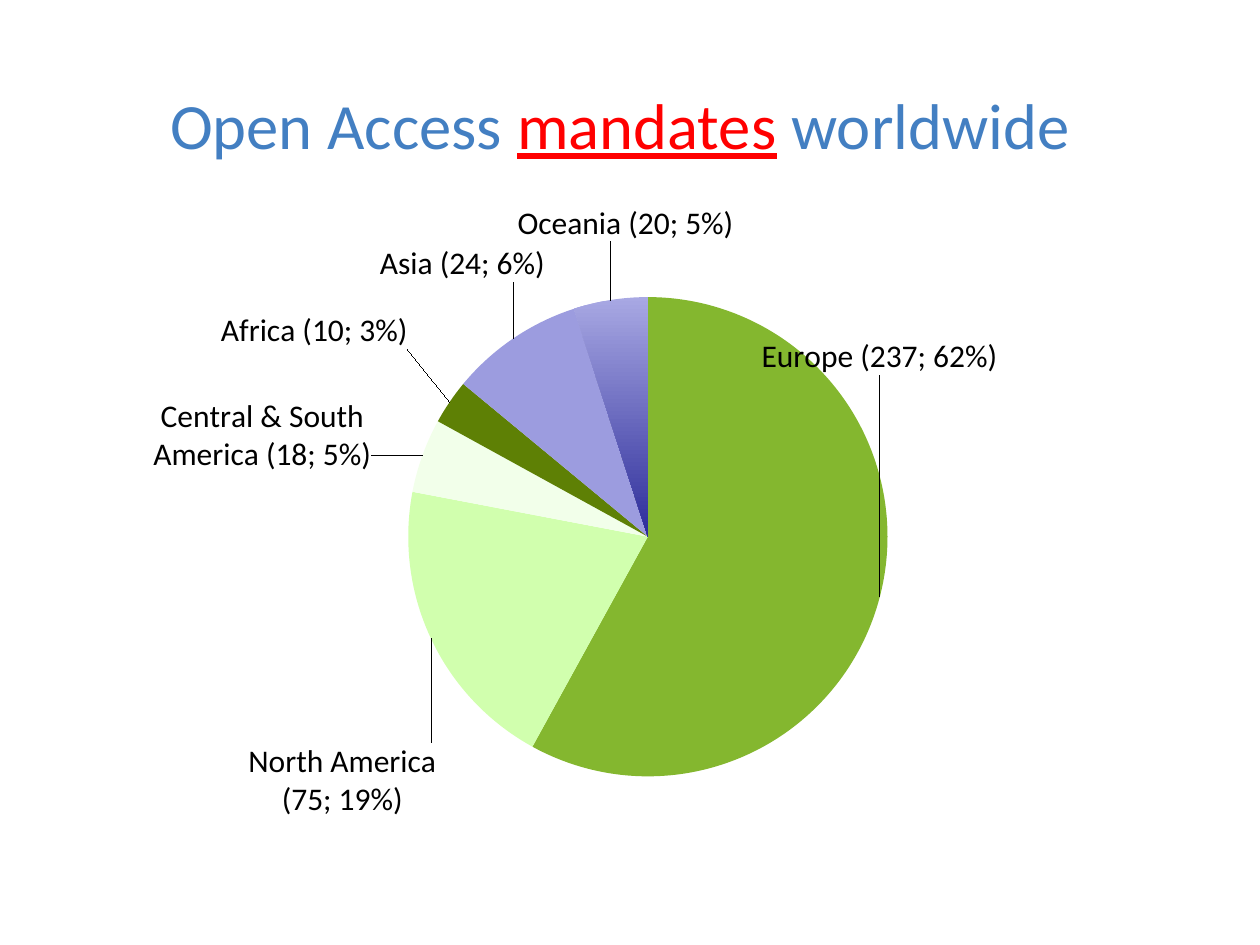
from pptx import Presentation
from pptx.chart.data import CategoryChartData
from pptx.dml.color import RGBColor
from pptx.enum.chart import XL_CHART_TYPE, XL_LABEL_POSITION
from pptx.enum.text import MSO_ANCHOR, PP_ALIGN
from pptx.oxml import parse_xml
from pptx.oxml.ns import nsdecls, qn
from pptx.util import Inches, Pt

REGIONS = [
    ("Europe", 58, "(237; 62%)", "84B72F", (-0.105, -0.38)),
    ("North America", 20, "(75; 19%)", "D1FFAE", (0.01, 0.146)),
    ("Central & South America", 5, "(18; 5%)", "F2FFEA", (-0.037, 0.03)),
    ("Africa", 3, "(10; 3%)", "5E8005", (-0.03, -0.07)),
    ("Asia", 9, "(24; 6%)", "9C9CDF", (0.03, -0.073)),
    ("Oceania", 5, "(20; 5%)", "2D2D8A", (0.104, -0.074)),
]
PLOT_AREA = (0.118, 0.185, 0.793, 0.698)


def rgb(color):
    return RGBColor.from_string(color)


def add_run(p, text, size, color, underline=False):
    r = p.add_run()
    r.text = text
    r.font.name = "Calibri"
    r.font.size = Pt(size)
    r.font.color.rgb = rgb(color)
    r.font.underline = underline


def add_title(s):
    sp = s.shapes.add_textbox(Inches(0.67), Inches(0.55), Inches(8.5), Inches(0.87))
    tf = sp.text_frame
    tf.word_wrap = True
    tf.vertical_anchor = MSO_ANCHOR.MIDDLE
    p = tf.paragraphs[0]
    p.alignment = PP_ALIGN.CENTER
    add_run(p, "Open Access ", 36.9, "437FC2")
    add_run(p, "mandates", 36.9, "FF0000", True)
    add_run(p, " worldwide", 36.9, "437FC2")


def manual_layout(x, y, w=None, h=None):
    parts = []
    if w is not None:
        parts += [("layoutTarget", "inner"), ("xMode", "edge"), ("yMode", "edge")]
    parts += [("x", x), ("y", y)]
    if w is not None:
        parts += [("w", w), ("h", h)]
    body = "".join(f'<c:{tag} val="{val}"/>' for tag, val in parts)
    return parse_xml(
        f'<c:layout {nsdecls("c")}><c:manualLayout>{body}</c:manualLayout></c:layout>'
    )


def set_layout(element, index, layout):
    for old in element.findall(qn("c:layout")):
        element.remove(old)
    element.insert(index, layout)


def fill_gradient(fill, top, bottom):
    fill.gradient()
    fill.gradient_angle = 270
    for stop, color in zip(fill.gradient_stops, (top, bottom)):
        stop.color.rgb = rgb(color)


def add_label(point, text):
    label = point.data_label
    tf = label.text_frame
    tf.word_wrap = True
    add_run(tf.paragraphs[0], text, 18, "000000")
    label.position = XL_LABEL_POSITION.OUTSIDE_END


def add_pie(s):
    data = CategoryChartData()
    data.categories = [region[0] for region in REGIONS]
    data.add_series("Series 1", [region[1] for region in REGIONS])
    chart = s.shapes.add_chart(
        XL_CHART_TYPE.PIE, Inches(0.26), Inches(1.35), Inches(9.49), Inches(5.45), data
    ).chart
    chart.has_title = False
    chart.has_legend = False
    chart.font.name = "Arial"
    chart.font.size = Pt(18)
    chart.font.color.rgb = rgb("000000")
    series = chart.plots[0].series[0]
    series.data_labels.show_category_name = True
    series.data_labels.show_value = False
    for i, (name, _, figures, color, _) in enumerate(REGIONS):
        point = series.points[i]
        point.format.fill.solid()
        point.format.fill.fore_color.rgb = rgb(color)
        add_label(point, f"{name} {figures}")
    fill_gradient(series.points[len(REGIONS) - 1].format.fill, "A8A8E3", "2D2D9A")
    root = chart.element
    set_layout(next(root.iter(qn("c:plotArea"))), 0, manual_layout(*PLOT_AREA))
    for label, region in zip(root.iter(qn("c:dLbl")), REGIONS):
        set_layout(label, 1, manual_layout(*region[4]))


def main():
    prs = Presentation()
    prs.slide_width = Inches(10)
    prs.slide_height = Inches(7.5)
    s = prs.slides.add_slide(prs.slide_layouts[6])
    add_title(s)
    add_pie(s)
    prs.save("out.pptx")


if __name__ == "__main__":
    main()
